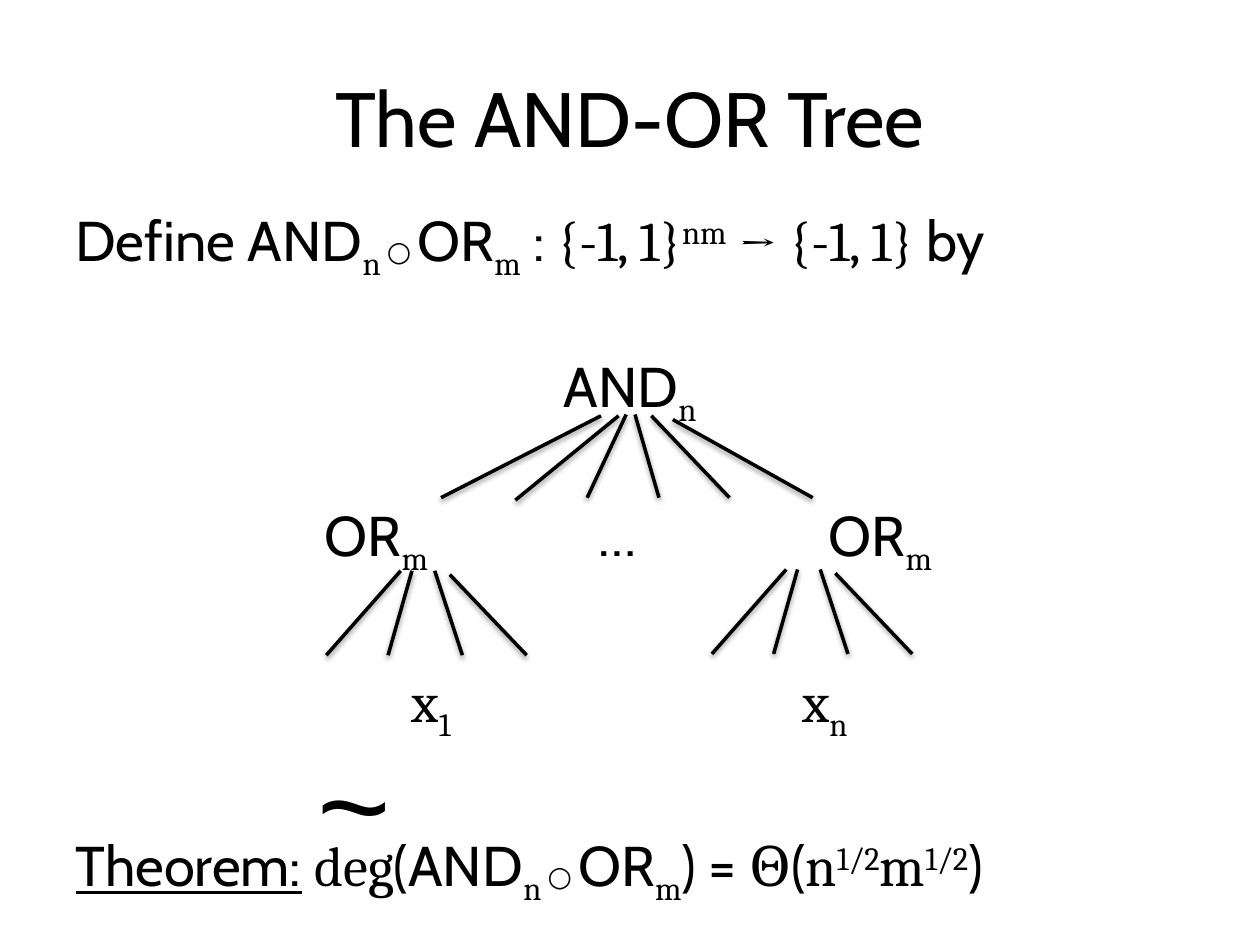
from lxml.etree import SubElement
from pptx import Presentation
from pptx.dml.color import RGBColor
from pptx.enum.shapes import MSO_CONNECTOR
from pptx.enum.text import MSO_ANCHOR, MSO_AUTO_SIZE, PP_ALIGN
from pptx.oxml.ns import qn
from pptx.util import Inches, Pt

BLACK = "000000"
SANS, SERIF = "Cabin", "Cambria"
SUB, SUP = -25, 30


def rgb(value):
    return RGBColor.from_string(value)


class Deck:
    def __init__(self):
        self.prs = Presentation()
        self.prs.slide_width, self.prs.slide_height = Inches(10), Inches(7.5)
        self.s = self.prs.slides.add_slide(self.prs.slide_layouts[1])

    def place(self, sp, left, top, width, height):
        sp.left, sp.top = Inches(left), Inches(top)
        sp.width, sp.height = Inches(width), Inches(height)
        sp.text_frame.word_wrap = True
        sp.text_frame.auto_size = MSO_AUTO_SIZE.NONE

    def run(self, p, text, font=SANS, size=32, base=0, underline=False):
        r = p.add_run()
        r.text = text
        r.font.name, r.font.size = font, Pt(size)
        r.font.color.rgb = rgb(BLACK)
        if underline:
            r.font.underline = True
        if base:
            r._r.get_or_add_rPr().set("baseline", str(base * 1000))

    def title(self, text, box):
        sp = self.s.shapes.title
        self.place(sp, *box)
        tf = sp.text_frame
        tf.vertical_anchor = MSO_ANCHOR.MIDDLE
        p = tf.paragraphs[0]
        p.alignment = PP_ALIGN.CENTER
        self.run(p, text, size=44)

    def body(self, rows, box):
        sp = self.s.placeholders[1]
        self.place(sp, *box)
        tf = sp.text_frame
        for i, (before, align, runs) in enumerate(rows):
            p = tf.add_paragraph() if i else tf.paragraphs[0]
            p.alignment = align
            p.space_before = Pt(before)
            pPr = p._p.get_or_add_pPr()
            pPr.set("marL", "0")
            pPr.set("indent", "0")
            SubElement(pPr, qn("a:buNone"))
            for args in runs:
                self.run(p, *args)

    def text(self, runs, box):
        sp = self.s.shapes.add_textbox(0, 0, 0, 0)
        self.place(sp, *box)
        for args in runs:
            self.run(sp.text_frame.paragraphs[0], *args)

    def branch(self, x1, y1, x2, y2):
        sp = self.s.shapes.add_connector(
            MSO_CONNECTOR.STRAIGHT, Inches(x1), Inches(y1), Inches(x2), Inches(y2))
        sp.line.color.rgb = rgb(BLACK)
        sp.line.width = Pt(2)
        effects = SubElement(sp._element.spPr, qn("a:effectLst"))
        shadow = SubElement(effects, qn("a:outerShdw"), blurRad=str(Pt(3.1)),
                            dist=str(Pt(1.6)), dir="5400000", rotWithShape="0")
        color = SubElement(shadow, qn("a:srgbClr"), val=BLACK)
        SubElement(color, qn("a:alpha"), val="38000")


def main():
    deck = Deck()
    left, center = PP_ALIGN.LEFT, PP_ALIGN.CENTER
    and_n = [("AND",), ("n", SERIF, 32, SUB)]
    or_m = [("OR",), ("m", SERIF, 32, SUB)]
    compose = and_n + [(" ○ ", SANS, 16)] + or_m
    half = ("1/2", SERIF, 32, SUP)

    define = [("Define ",), *compose, (" : ",), ("{-1, 1}", SERIF),
              ("nm", SERIF, 32, SUP), (" ", SERIF), ("→", SERIF, 28),
              (" {-1, 1} ", SERIF), ("by",)]
    theorem = [("Theorem:", SANS, 32, 0, True), (" ",), ("deg", SERIF), ("(",),
               *compose, (") = ",), ("Θ", SERIF), ("(",), ("n", SERIF), half,
               ("m", SERIF), half, (")",)]

    deck.text([("~", "Arial", 72)], (2.42, 5.7, 1.25, 1.31))
    deck.body([
        (6.4, left, define),
        (40, center, and_n),
        (230, left, theorem),
    ], (0.5, 1.58, 9, 5.29))

    for x, label in ((2.48, or_m), (4.65, [("…",)]), (6.48, or_m)):
        deck.text(label, (x, 3.92, 1.2, 0.7))
    for x, index in ((3.17, "1"), (6.27, "n")):
        deck.text([("x", SERIF), (index, SERIF, 32, SUB)], (x, 5.24, 0.8, 0.7))

    root_branches = [
        (4.77, 3.3, 3.5, 3.95), (4.91, 3.3, 4.09, 3.97), (4.97, 3.29, 4.66, 3.95),
        (5.04, 3.29, 5.23, 3.95), (5.17, 3.3, 5.79, 3.95), (5.34, 3.33, 6.45, 3.95),
    ]
    gate_branches = [
        (3.18, 4.53, 2.59, 5.2), (3.27, 4.53, 3.08, 5.2),
        (3.45, 4.53, 3.67, 5.2), (3.57, 4.56, 4.18, 5.2),
    ]
    for ends in root_branches:
        deck.branch(*ends)
    for dx, dy in ((0, 0), (3.06, -0.01)):
        for x1, y1, x2, y2 in gate_branches:
            deck.branch(x1 + dx, y1 + dy, x2 + dx, y2 + dy)

    deck.title("The AND-OR Tree", (0.5, 0.3, 9, 1.25))
    deck.prs.save("out.pptx")


if __name__ == "__main__":
    main()
